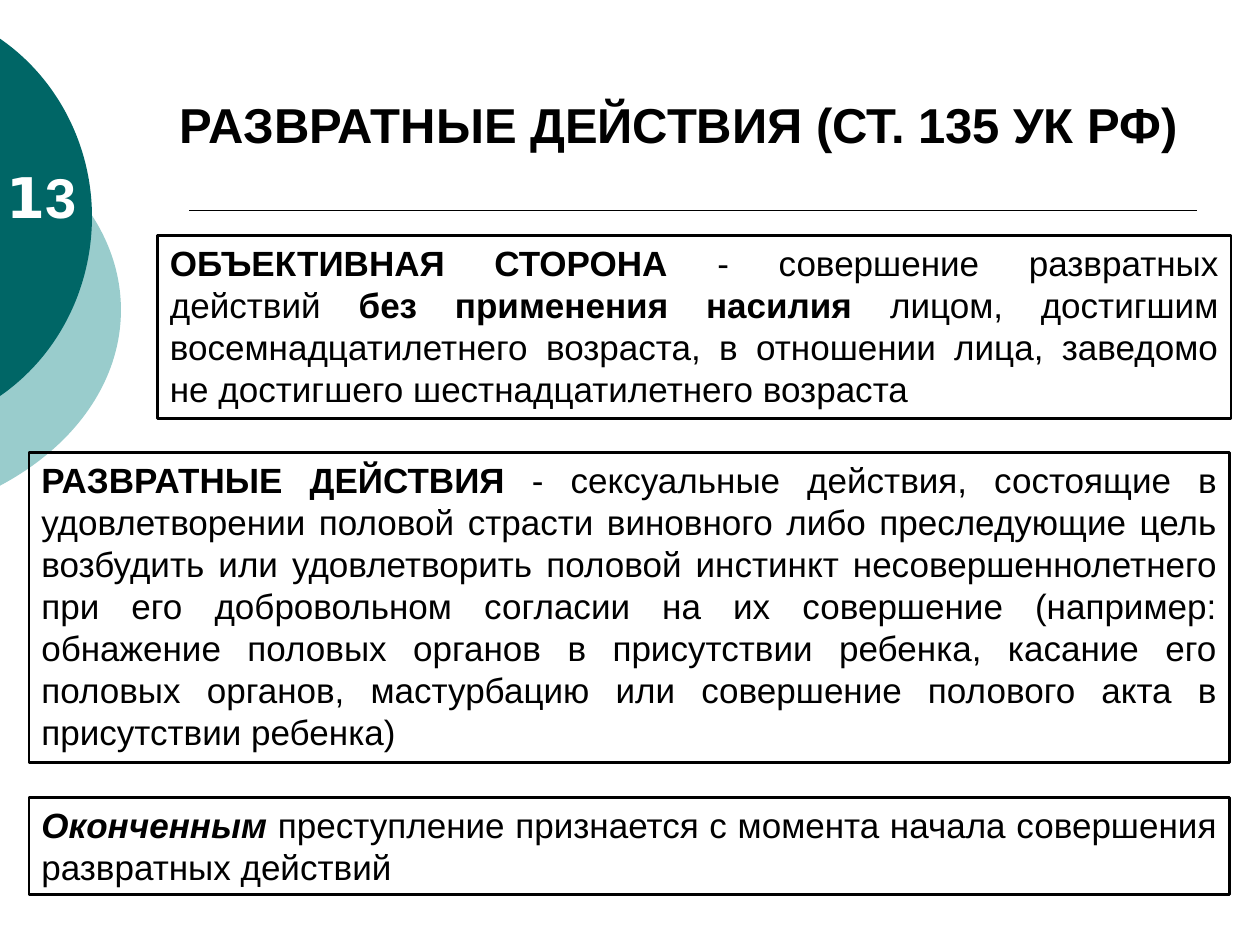
from dataclasses import dataclass

from lxml import etree
from pptx import Presentation
from pptx import util as u
from pptx.dml.color import RGBColor
from pptx.enum import shapes, text
from pptx.oxml.ns import qn

PX = u.Inches(1) // 100
BLACK = RGBColor(0x00, 0x00, 0x00)
WHITE = RGBColor(0xFF, 0xFF, 0xFF)
TEAL = RGBColor(0x00, 0x66, 0x66)
PALE_TEAL = RGBColor(0x99, 0xCC, 0xCC)


@dataclass(frozen=True)
class Box:
    left: int
    top: int
    width: int
    height: int

    def emu(self) -> list[int]:
        return [side * PX for side in (self.left, self.top, self.width, self.height)]


@dataclass(frozen=True)
class Span:
    words: str
    bold: bool = False
    italic: bool = False
    font: str = "Arial"


@dataclass(frozen=True)
class CircleEdge:
    box: Box
    upper_curve: tuple[tuple[int, int], ...]
    color: RGBColor


@dataclass(frozen=True)
class Definition:
    box: Box
    spans: tuple[Span, ...]


CIRCLE_EDGES = (
    CircleEdge(Box(-354, 75, 450, 342),
               ((-1, 106), (60, 138), (96, 190), (96, 246)), PALE_TEAL),
    CircleEdge(Box(-265, 0, 338, 345),
               ((-1, 30), (46, 62), (73, 116), (73, 172)), TEAL),
)

DEFINITIONS = (
    Definition(Box(125, 187, 852, 145), (
        Span("ОБЪЕКТИВНАЯ СТОРОНА ", bold=True),
        Span("- совершение развратных действий "),
        Span("без применения насилия ", bold=True),
        Span("лицом, достигшим восемнадцатилетнего возраста, в отношении лица, "
             "заведомо не достигшего шестнадцатилетнего возраста"),
    )),
    Definition(Box(23, 359, 953, 246), (
        Span("РАЗВРАТНЫЕ ДЕЙСТВИЯ ", bold=True),
        Span("- сексуальные действия, состоящие в удовлетворении половой страсти "
             "виновного либо преследующие цель возбудить или удовлетворить половой "
             "инстинкт несовершеннолетнего при его добровольном согласии на их "
             "совершение (например: обнажение половых органов в присутствии ребенка, "
             "касание его половых органов, мастурбацию или совершение полового акта "
             "в присутствии ребенка)"),
    )),
    Definition(Box(23, 633, 953, 77), (
        Span("Оконченным ", bold=True, italic=True),
        Span("преступление признается с момента начала совершения развратных действий"),
    )),
)


def add_path_step(path, name: str, points: list[tuple[int, int]]) -> None:
    step = etree.SubElement(path, qn(f"a:{name}"))
    for x, y in points:
        etree.SubElement(step, qn("a:pt"), x=str(x * PX), y=str(y * PX))


def draw_circle_edge(slide, edge: CircleEdge) -> None:
    box = edge.box
    left, top, width, height = box.emu()
    builder = slide.shapes.build_freeform(left, top)
    builder.add_line_segments([(left + width, top), (left + width, top + height)])
    shape = builder.convert_to_shape()
    shape.shadow.inherit = False
    shape.fill.solid()
    shape.fill.fore_color.rgb = edge.color
    shape.line.fill.background()

    upper = [(x - box.left, y - box.top) for x, y in edge.upper_curve]
    lower = [(x, box.height - y) for x, y in reversed(upper)]
    path = shape._element.spPr.find(".//" + qn("a:path"))
    for step in list(path):
        path.remove(step)
    add_path_step(path, "moveTo", upper[:1])
    add_path_step(path, "cubicBezTo", upper[1:])
    add_path_step(path, "cubicBezTo", lower[1:])
    add_path_step(path, "close", [])


def draw_rule(slide, left: int, right: int, y: int) -> None:
    rule = slide.shapes.add_connector(
        shapes.MSO_CONNECTOR.STRAIGHT, left * PX, y * PX, right * PX, y * PX)
    rule.line.color.rgb = BLACK
    rule.line.width = u.Pt(1)
    etree.SubElement(rule._element.spPr, qn("a:effectLst"))


def write_spans(shape, spans: tuple[Span, ...], size: int, color: RGBColor,
                alignment=text.PP_ALIGN.LEFT, wrap: bool = True) -> None:
    frame = shape.text_frame
    frame.word_wrap = wrap
    frame.auto_size = text.MSO_AUTO_SIZE.SHAPE_TO_FIT_TEXT
    frame.vertical_anchor = text.MSO_ANCHOR.TOP
    paragraph = frame.paragraphs[0]
    paragraph.alignment = alignment
    for span in spans:
        run = paragraph.add_run()
        run.text = span.words
        run.font.name = span.font
        run.font.size = u.Pt(size)
        run.font.bold = span.bold
        run.font.italic = span.italic
        run.font.color.rgb = color


def draw_definition(slide, definition: Definition) -> None:
    shape = slide.shapes.add_shape(shapes.MSO_SHAPE.RECTANGLE, *definition.box.emu())
    shape.shadow.inherit = False
    shape.fill.background()
    shape.line.color.rgb = BLACK
    shape.line.width = u.Pt(1.5)
    write_spans(shape, definition.spans, 20, BLACK, text.PP_ALIGN.JUSTIFY)


def main() -> None:
    presentation = Presentation()
    presentation.slide_width = 1000 * PX
    presentation.slide_height = 750 * PX
    slide = presentation.slides.add_slide(presentation.slide_layouts[6])

    for edge in CIRCLE_EDGES:
        draw_circle_edge(slide, edge)
    draw_rule(slide, 150, 950, 167)

    number = slide.shapes.add_textbox(*Box(-5, 124, 111, 63).emu())
    write_spans(number, (Span("1", bold=True, font="DejaVu Sans"), Span("3", bold=True)),
                32, WHITE)
    title = slide.shapes.add_textbox(*Box(133, 70, 821, 57).emu())
    write_spans(title, (Span("РАЗВРАТНЫЕ ДЕЙСТВИЯ (СТ. 135 УК РФ)", bold=True),),
                28, BLACK, wrap=False)

    for definition in DEFINITIONS:
        draw_definition(slide, definition)
    presentation.save("out.pptx")


if __name__ == "__main__":
    main()
